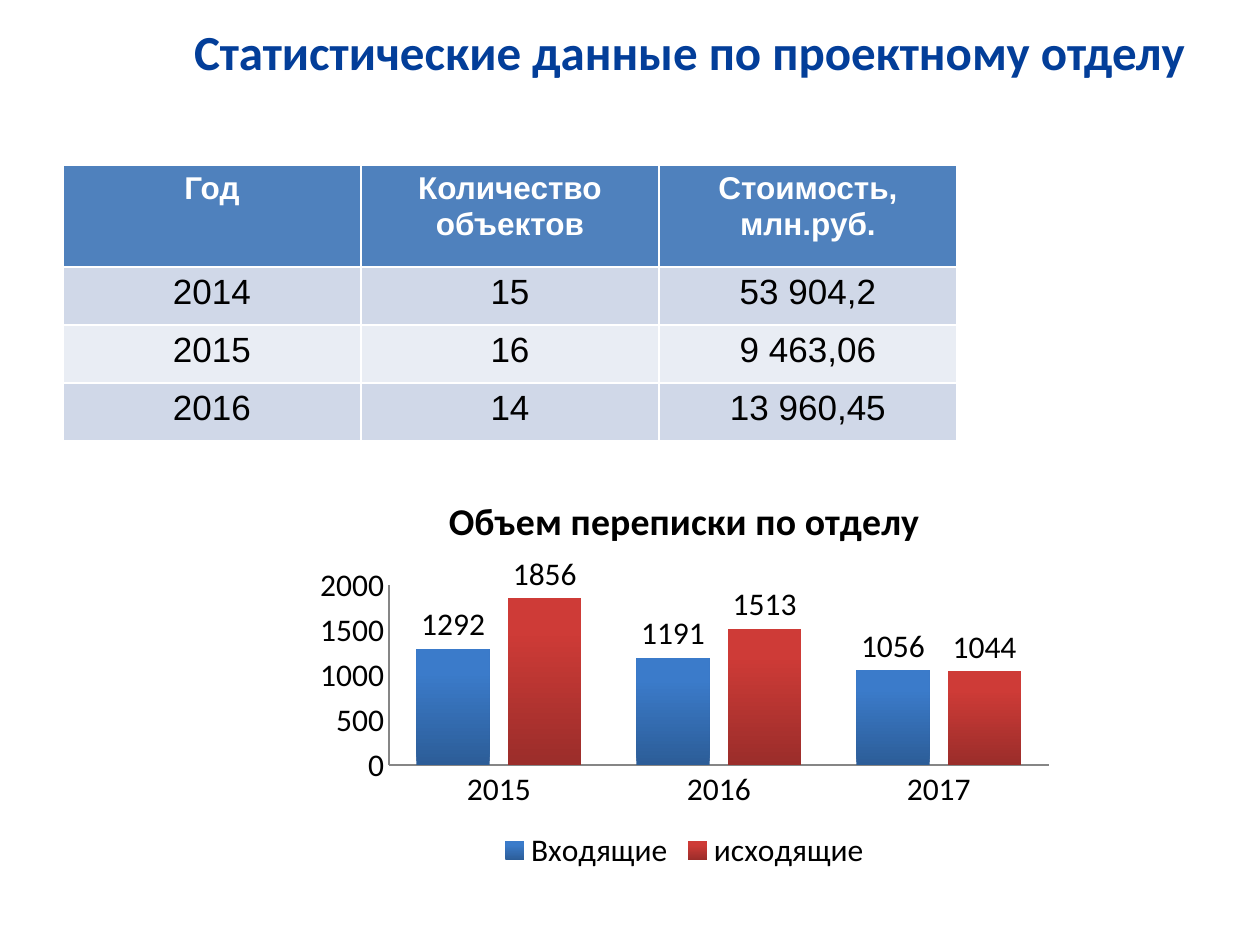
from pptx import Presentation
from pptx.chart.data import CategoryChartData
from pptx.dml.color import RGBColor
from pptx.enum.chart import (XL_CHART_TYPE as ChartType, XL_LABEL_POSITION as LabelPosition,
                             XL_LEGEND_POSITION as LegendPosition, XL_TICK_MARK as TickMark)
from pptx.enum.text import MSO_ANCHOR as Anchor, PP_ALIGN as Align
from pptx.util import Emu, Pt

PX_PER_INCH = 126
WHITE = RGBColor(0xFF, 0xFF, 0xFF)
BLACK = RGBColor(0x00, 0x00, 0x00)
NAVY = RGBColor(0x03, 0x3E, 0x99)
HEADER_BLUE = RGBColor(0x4F, 0x81, 0xBD)
BANDS = RGBColor(0xD0, 0xD8, 0xE8), RGBColor(0xE9, 0xED, 0xF4)
AXIS_GREY = RGBColor(0x86, 0x86, 0x86)
# Bottom and top colour of the columns of each series
INCOMING_SHADES = RGBColor(0x2C, 0x5D, 0x98), RGBColor(0x3B, 0x7B, 0xCA)
OUTGOING_SHADES = RGBColor(0x9B, 0x2D, 0x2A), RGBColor(0xCE, 0x3B, 0x37)

PROJECTS = [
    ("Год", "Количество объектов", "Стоимость, млн.руб."),
    ("2014", "15", "53 904,2"),
    ("2015", "16", "9 463,06"),
    ("2016", "14", "13 960,45"),
]
YEARS = ["2015", "2016", "2017"]
LETTERS = [
    ("Входящие", (1292, 1191, 1056), INCOMING_SHADES),
    ("исходящие", (1856, 1513, 1044), OUTGOING_SHADES),
]


def px(length):
    return Emu(round(length * 914400 / PX_PER_INCH))


def write(frame, text, *, size, font="Calibri", color=BLACK, bold=False, align=Align.CENTER):
    paragraph = frame.paragraphs[0]
    paragraph.alignment = align
    run = paragraph.add_run()
    run.text = text
    run.font.name = font
    run.font.size = Pt(size)
    run.font.bold = bold
    run.font.color.rgb = color


def add_heading(slide, box):
    frame = slide.shapes.add_textbox(*map(px, box)).text_frame
    frame.word_wrap = True
    frame.vertical_anchor = Anchor.MIDDLE
    write(frame, "Статистические данные по проектному отделу",
          size=28, color=NAVY, bold=True, align=Align.RIGHT)


def add_projects_table(slide, box, header_height):
    """Fill the box with a header row and equal data rows."""
    row_count, column_count = len(PROJECTS), len(PROJECTS[0])
    table = slide.shapes.add_table(row_count, column_count, *map(px, box)).table
    for column in table.columns:
        column.width = px(box[2] / column_count)
    data_height = (box[3] - header_height) / (row_count - 1)
    for index, values in enumerate(PROJECTS):
        is_header = index == 0
        table.rows[index].height = px(header_height if is_header else data_height)
        for cell, value in zip(table.rows[index].cells, values):
            cell.fill.solid()
            cell.fill.fore_color.rgb = HEADER_BLUE if is_header else BANDS[(index - 1) % 2]
            write(cell.text_frame, value, font="Arial", size=18 if is_header else 20,
                  color=WHITE if is_header else BLACK, bold=is_header)


def shade_columns(series, shades):
    """Run a gradient from the foot of each column to its top."""
    fill = series.format.fill
    fill.gradient()
    fill.gradient_angle = 90
    for stop, color, position in zip(fill.gradient_stops, shades, (0, 0.8)):
        stop.color.rgb = color
        stop.position = position


def add_letters_chart(slide, box):
    data = CategoryChartData()
    data.categories = YEARS
    for name, counts, _ in LETTERS:
        data.add_series(name, counts)
    chart = slide.shapes.add_chart(ChartType.COLUMN_CLUSTERED, *map(px, box), data).chart
    chart.font.name = "Calibri"
    chart.font.size = Pt(18)
    chart.font.color.rgb = BLACK

    chart.has_title = True
    write(chart.chart_title.text_frame, "Объем переписки по отделу", size=21.6, bold=True)
    chart.chart_title.include_in_layout = False
    chart.has_legend = True
    chart.legend.position = LegendPosition.BOTTOM
    chart.legend.include_in_layout = False

    for axis in (chart.category_axis, chart.value_axis):
        axis.major_tick_mark = axis.minor_tick_mark = TickMark.NONE
        axis.has_major_gridlines = False
        axis.format.line.color.rgb = AXIS_GREY
        axis.format.line.width = Pt(0.75)
    chart.value_axis.minimum_scale = 0
    chart.value_axis.maximum_scale = 2000
    chart.value_axis.major_unit = 500

    plot = chart.plots[0]
    plot.vary_by_categories = False
    plot.gap_width = 75
    plot.overlap = -25
    for series, (_, _, shades) in zip(plot.series, LETTERS):
        shade_columns(series, shades)
        series.data_labels.show_value = True
        series.data_labels.position = LabelPosition.OUTSIDE_END


def main():
    deck = Presentation()
    deck.slide_width, deck.slide_height = px(1260), px(945)
    slide = deck.slides.add_slide(deck.slide_layouts[6])
    add_heading(slide, (63, 16, 1134, 69))
    add_projects_table(slide, (63, 165, 894, 276), header_height=102)
    add_letters_chart(slide, (305, 473, 759, 403))
    deck.save("out.pptx")


if __name__ == "__main__":
    main()
